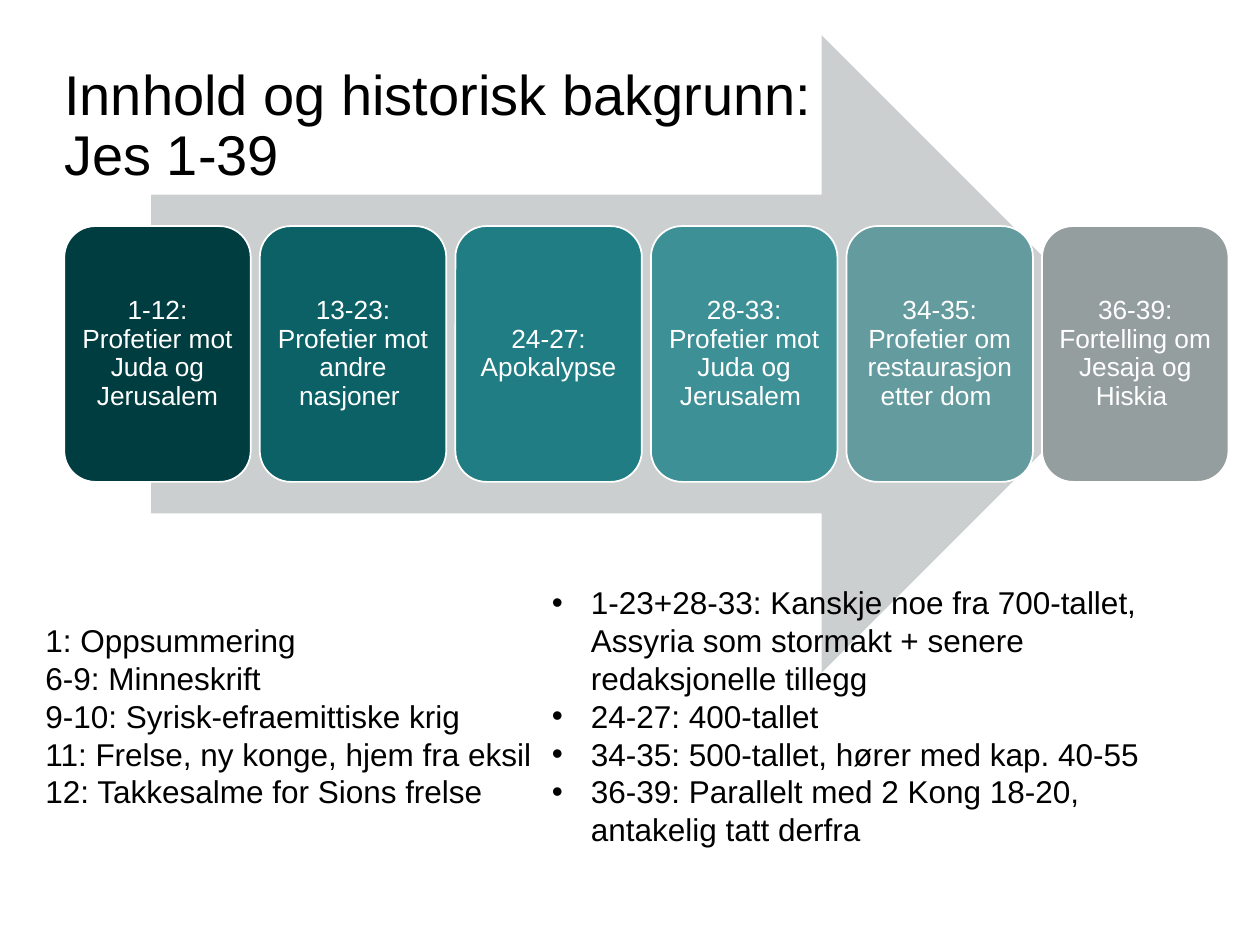
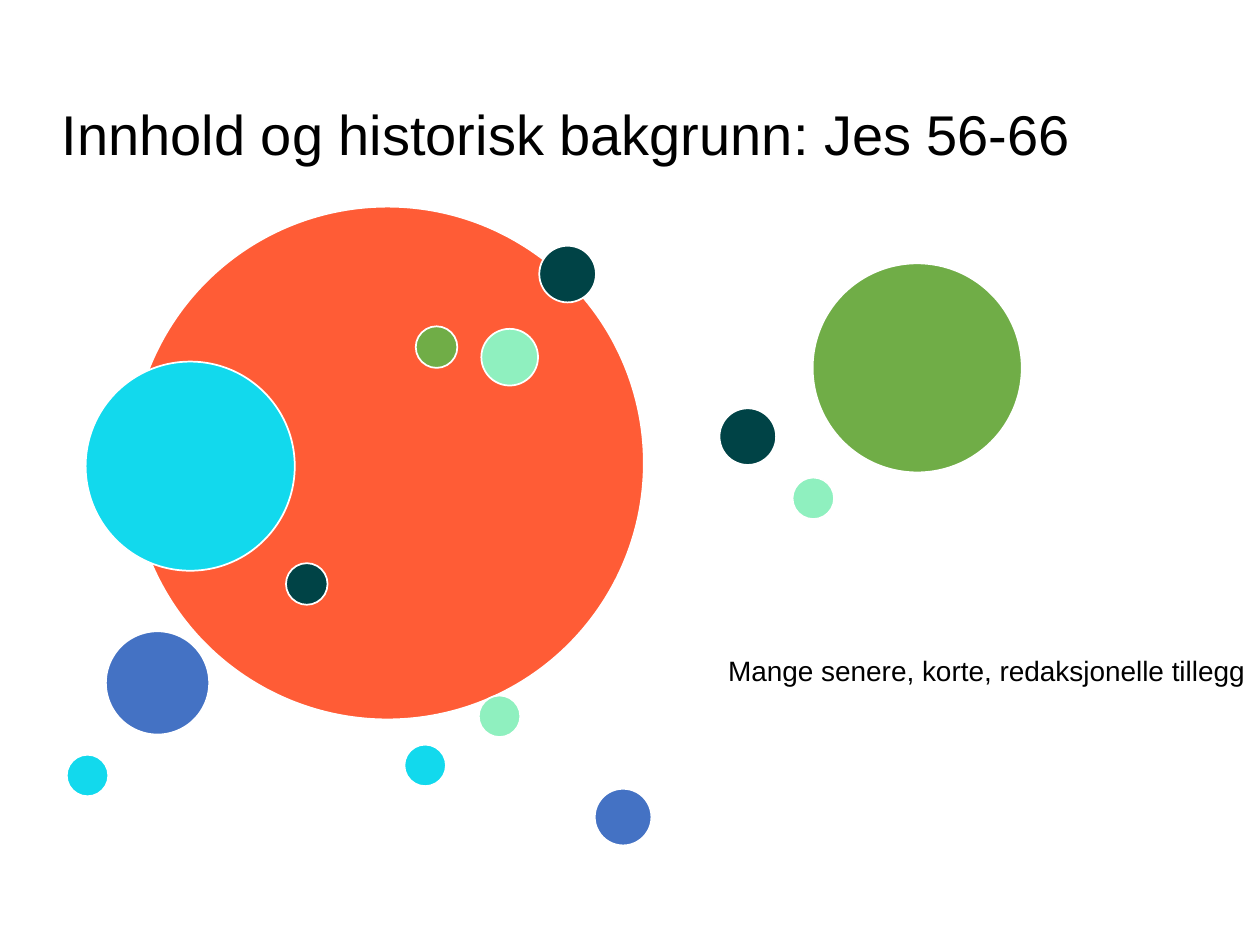
from pptx import Presentation
from pptx.dml.color import RGBColor
from pptx.enum.shapes import MSO_SHAPE as Preset
from pptx.enum.text import MSO_ANCHOR as Anchor, MSO_AUTO_SIZE as AutoSize, PP_ALIGN as Align
from pptx.oxml.ns import qn
from pptx.oxml.xmlchemy import OxmlElement
from pptx.util import Inches, Pt

FONT = "Arial"
TITLE_SIZE = 32
COLORS = {
    "black": "000000", "white": "FFFFFF", "arrow": "CCCFCF",
    "orange": "FF5C36", "petrol": "004346", "cyan": "12D9ED",
    "mint": "8FF0BF", "blue": "4472C4", "green": "70AD47",
}
CARDS = [
    ("1-12: Profetier mot Juda og Jerusalem", "003D40"),
    ("13-23: Profetier mot andre nasjoner ", "0B6166"),
    ("24-27: Apokalypse", "1F7D83"),
    ("28-33: Profetier mot Juda og Jerusalem ", "3C9096"),
    ("34-35: Profetier om restaurasjon etter dom ", "649B9F"),
    ("36-39: Fortelling om Jesaja og Hiskia ", "959E9F"),
]
CHAPTERS = [
    "1: Oppsummering",
    "6-9: Minneskrift",
    "9-10: Syrisk-efraemittiske krig",
    "11: Frelse, ny konge, hjem fra eksil",
    "12: Takkesalme for Sions frelse",
]
DATINGS = [
    "1-23+28-33: Kanskje noe fra 700-tallet, Assyria som stormakt + senere redaksjonelle tillegg",
    "24-27: 400-tallet",
    "34-35: 500-tallet, hører med kap. 40-55",
    "36-39: Parallelt med 2 Kong 18-20, antakelig tatt derfra",
]
DIAMETERS = {"tiny": 0.33, "small": 0.45, "medium": 0.82, "large": 1.66, "huge": 4.07}
CIRCLES = [
    (0.51, 0, "huge", "orange"), (3.75, 0.31, "small", "petrol"),
    (2.68, 4.27, "tiny", "cyan"), (5.76, 2.15, "tiny", "mint"),
    (4.19, 4.62, "small", "blue"), (2.77, 0.95, "tiny", "green"),
    (1.74, 2.83, "tiny", "petrol"), (0.15, 1.23, "large", "cyan"),
    (3.29, 0.97, "small", "mint"), (0.31, 3.37, "medium", "blue"),
    (5.92, 0.45, "large", "green"), (5.18, 1.6, "small", "petrol"),
    (0, 4.35, "tiny", "cyan"), (3.27, 3.88, "tiny", "mint"),
]


def set_bullet(paragraph, bullet):
    """Give a paragraph a hanging bullet, or none at all."""
    properties = paragraph._p.get_or_add_pPr()
    indent = Inches(0.31) if bullet else 0
    properties.set("marL", str(indent))
    properties.set("indent", str(-indent))
    mark = OxmlElement("a:buChar" if bullet else "a:buNone")
    if bullet:
        mark.set("char", bullet)
    properties.append(mark)


def write_text(shape, lines, size=18, color="black", align=Align.LEFT, anchor=Anchor.TOP,
               spacing=1.0, margins=(0.1, 0.05), bullet=None, wrap=True):
    """Fill a shape with one formatted paragraph for each line."""
    frame = shape.text_frame
    frame.auto_size = AutoSize.NONE
    frame.word_wrap = wrap
    frame.vertical_anchor = anchor
    frame.margin_left = frame.margin_right = Inches(margins[0])
    frame.margin_top = frame.margin_bottom = Inches(margins[1])
    for index, line in enumerate(lines):
        paragraph = frame.add_paragraph() if index else frame.paragraphs[0]
        set_bullet(paragraph, bullet)
        paragraph.text = line
        paragraph.alignment = align
        paragraph.line_spacing = spacing
        paragraph.space_before = Pt(0)
        for run in paragraph.runs:
            run.font.name = FONT
            run.font.size = Pt(size)
            run.font.color.rgb = RGBColor.from_string(COLORS[color])


def place(shape, left, top, width, height):
    """Move a shape into a box given in inches."""
    shape.left, shape.top = Inches(left), Inches(top)
    shape.width, shape.height = Inches(width), Inches(height)
    return shape


def add_filled(slide, preset, box, fill, outlined=True):
    """Add a preset shape with a solid fill and an optional white outline."""
    shape = slide.shapes.add_shape(preset, *map(Inches, box))
    shape.shadow.inherit = False
    shape.fill.solid()
    shape.fill.fore_color.rgb = RGBColor.from_string(fill)
    if outlined:
        shape.line.color.rgb = RGBColor.from_string(COLORS["white"])
        shape.line.width = Pt(1)
    else:
        shape.line.fill.background()
    return shape


def add_title(slide, text, left, top):
    """Fill the title placeholder."""
    title = place(slide.shapes.title, left, top, 8.44, 1.05)
    write_text(title, [text], size=TITLE_SIZE, spacing=0.9, margins=(0, 0))


def add_process(slide, left, top, width, height):
    """Lay a row of cards over a large arrow that stays behind the lists."""
    arrow_box = (left + 0.69, top, 7.85, height)
    arrow = add_filled(slide, Preset.RIGHT_ARROW, arrow_box, COLORS["arrow"], outlined=False)
    slide.shapes.title.element.addnext(arrow.element)
    card_width, card_height = 1.48, 2.03
    step = (width - card_width) / (len(CARDS) - 1)
    card_top = top + (height - card_height) / 2
    for index, (text, fill) in enumerate(CARDS):
        card_box = (left + index * step, card_top, card_width, card_height)
        card = add_filled(slide, Preset.ROUNDED_RECTANGLE, card_box, fill)
        write_text(card, [text], size=15, color="white", align=Align.CENTER,
                   anchor=Anchor.MIDDLE, spacing=0.9, margins=(0.06, 0.06))


def add_circles(slide, left, top):
    """Scatter the circles from the top left corner of their region."""
    for across, down, size, color in CIRCLES:
        diameter = DIAMETERS[size]
        add_filled(slide, Preset.OVAL, (left + across, top + down, diameter, diameter), COLORS[color])


def build_process_slide(presentation):
    """Build the slide on chapters 1-39."""
    slide = presentation.slides.add_slide(presentation.slide_layouts.get_by_name("Two Content"))
    add_title(slide, "Innhold og historisk bakgrunn: \vJes 1-39", 0.51, 0.53)
    chapters, datings = list(slide.placeholders)[1:3]
    write_text(place(chapters, 0.26, 4.88, 4.13, 1.62), CHAPTERS)
    write_text(place(datings, 4.28, 4.58, 4.89, 2.22), DATINGS, bullet="•")
    add_process(slide, 0.51, 0.28, 9.24, 5.06)
    for placeholder in list(slide.placeholders)[3:]:
        placeholder.element.getparent().remove(placeholder.element)


def build_circles_slide(presentation):
    """Build the slide on chapters 56-66."""
    slide = presentation.slides.add_slide(presentation.slide_layouts.get_by_name("Title Only"))
    add_title(slide, "Innhold og historisk bakgrunn: Jes 56-66", 0.49, 0.85)
    add_circles(slide, 0.53, 1.64)
    remark = slide.shapes.add_textbox(*map(Inches, (5.68, 5.14, 4.32, 0.37)))
    write_text(remark, ["Mange senere, korte, redaksjonelle tillegg"], size=16, wrap=False)


def main():
    """Create the presentation and save it."""
    presentation = Presentation()
    presentation.slide_width, presentation.slide_height = Inches(10), Inches(7.5)
    title_style = next(presentation.slide_master.element.iter(qn("p:titleStyle")))
    next(title_style.iter(qn("a:defRPr"))).set("sz", str(TITLE_SIZE * 100))
    build_process_slide(presentation)
    build_circles_slide(presentation)
    presentation.save("out.pptx")


if __name__ == "__main__":
    main()
